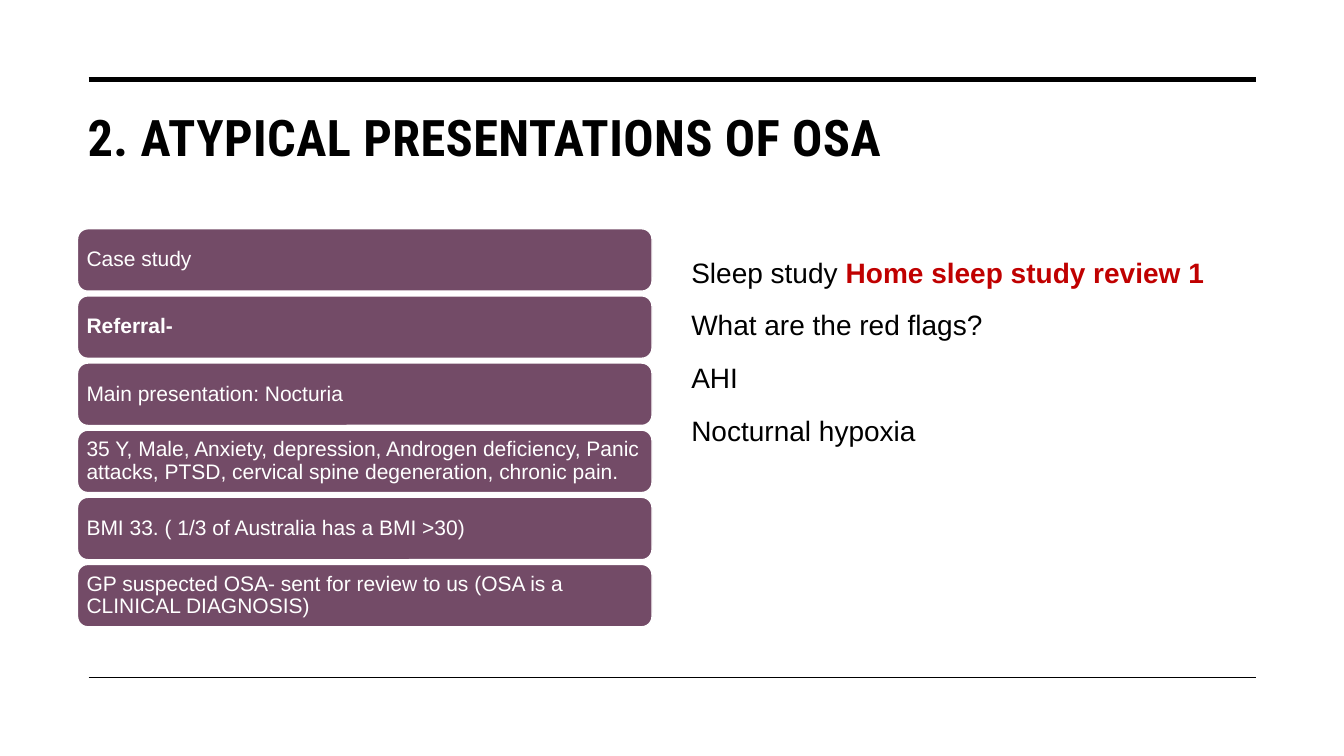
from dataclasses import dataclass

from lxml import etree
from pptx import Presentation
from pptx.dml.color import RGBColor
from pptx.enum.shapes import MSO_CONNECTOR, MSO_SHAPE
from pptx.enum.text import MSO_ANCHOR, MSO_AUTO_SIZE, PP_ALIGN
from pptx.oxml.ns import qn
from pptx.util import Pt

STRAIGHT = MSO_CONNECTOR.STRAIGHT
ROUNDED = MSO_SHAPE.ROUNDED_RECTANGLE
TOP, MIDDLE = MSO_ANCHOR.TOP, MSO_ANCHOR.MIDDLE
LEFT = PP_ALIGN.LEFT
NO_AUTOFIT = MSO_AUTO_SIZE.NONE


@dataclass(frozen=True)
class Theme:
    ink: RGBColor = RGBColor(0x00, 0x00, 0x00)
    paper: RGBColor = RGBColor(0xFF, 0xFF, 0xFF)
    plum: RGBColor = RGBColor(0x73, 0x4B, 0x67)
    red: RGBColor = RGBColor(0xC0, 0x00, 0x00)
    heading_font: str = "Roboto Condensed"
    body_font: str = "Arial"
    title_size: float = 36
    body_size: float = 20
    card_size: float = 15


@dataclass(frozen=True)
class Rule:
    y: float
    weight: float


@dataclass(frozen=True)
class Card:
    text: str
    bold: bool = False


@dataclass(frozen=True)
class Point:
    text: str
    highlight: str = ""


THEME = Theme()
SLIDE_W, SLIDE_H = 960, 540
RULE_LEFT, RULE_RIGHT = 63.4, 897.1
CARD_LEFT, CARD_TOP, CARD_W, CARD_H = 55.4, 163.4, 410.4, 44.6
CARD_PITCH = 47.95
CARD_INSET = 4.3

RULES = [Rule(56.9, 3.5), Rule(483.8, 1)]
CARDS = [
    Card("Case study"),
    Card("Referral-", bold=True),
    Card("Main presentation: Nocturia"),
    Card("35 Y, Male, Anxiety, depression, Androgen deficiency, Panic attacks, "
         "PTSD, cervical spine degeneration, chronic pain."),
    Card("BMI 33. ( 1/3 of Australia has a BMI >30)"),
    Card("GP suspected OSA- sent for review to us (OSA is a CLINICAL DIAGNOSIS)"),
]
POINTS = [
    Point("Sleep study ", highlight="Home sleep study review 1"),
    Point("What are the red flags?"),
    Point("AHI"),
    Point("Nocturnal hypoxia"),
]


def style_font(font, name: str, size: float, color: RGBColor, bold: bool = False) -> None:
    font.name, font.size, font.bold = name, Pt(size), bold
    font.color.rgb = color


def add_title(slide, text: str) -> None:
    sp = slide.shapes.title
    sp.left, sp.top, sp.width, sp.height = Pt(55.4), Pt(72), Pt(841.7), Pt(103)
    tf = sp.text_frame
    tf.auto_size = NO_AUTOFIT
    tf.vertical_anchor = TOP
    p = tf.paragraphs[0]
    p.alignment = LEFT
    style_font(p.font, THEME.heading_font, THEME.title_size, THEME.ink, bold=True)
    r = p.add_run()
    r.text = text
    r.font._element.set("spc", "30")


def add_rule(slide, rule: Rule) -> None:
    line = slide.shapes.add_connector(
        STRAIGHT, Pt(RULE_LEFT), Pt(rule.y), Pt(RULE_RIGHT), Pt(rule.y))
    line.line.color.rgb = THEME.ink
    line.line.width = Pt(rule.weight)
    etree.SubElement(line._element.spPr, qn("a:effectLst"))


def add_card(slide, card: Card, row: int) -> None:
    sp = slide.shapes.add_shape(
        ROUNDED, Pt(CARD_LEFT), Pt(CARD_TOP + row * CARD_PITCH), Pt(CARD_W), Pt(CARD_H))
    sp.shadow.inherit = False
    sp.fill.solid()
    sp.fill.fore_color.rgb = THEME.plum
    sp.line.color.rgb = THEME.paper
    sp.line.width = Pt(1)
    tf = sp.text_frame
    tf.word_wrap = True
    tf.vertical_anchor = MIDDLE
    tf.margin_left = tf.margin_right = tf.margin_top = tf.margin_bottom = Pt(CARD_INSET)
    p = tf.paragraphs[0]
    p.text = card.text
    p.alignment = LEFT
    p.line_spacing = 0.9
    style_font(p.font, THEME.body_font, THEME.card_size, THEME.paper, card.bold)


def add_points(slide, points: list[Point]) -> None:
    tf = slide.shapes.add_textbox(Pt(486.7), Pt(175), Pt(410.4), Pt(294.5)).text_frame
    tf.word_wrap = True
    for i, point in enumerate(points):
        p = tf.add_paragraph() if i else tf.paragraphs[0]
        p.line_spacing = 1.15
        p.space_before = Pt(10)
        style_font(p.font, THEME.body_font, THEME.body_size, THEME.ink)
        p.add_run().text = point.text
        if point.highlight:
            r = p.add_run()
            r.text = point.highlight
            r.font.bold = True
            r.font.color.rgb = THEME.red


def main() -> None:
    prs = Presentation()
    prs.slide_width, prs.slide_height = Pt(SLIDE_W), Pt(SLIDE_H)
    s = prs.slides.add_slide(prs.slide_layouts.get_by_name("Title Only"))
    add_title(s, "2. ATYPICAL PRESENTATIONS OF OSA")
    for rule in RULES:
        add_rule(s, rule)
    for row, card in enumerate(CARDS):
        add_card(s, card, row)
    add_points(s, POINTS)
    prs.save("out.pptx")


if __name__ == "__main__":
    main()
